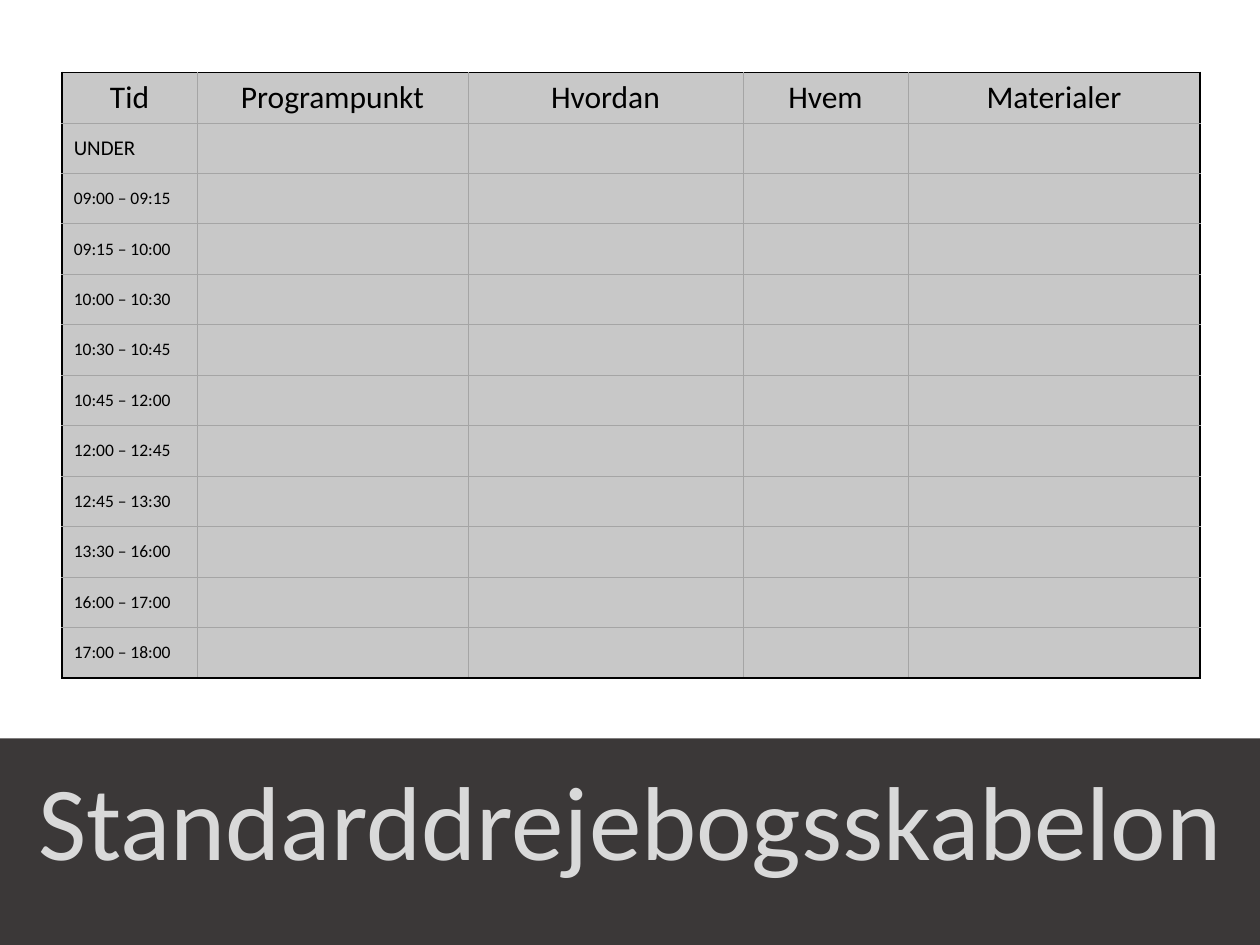
from lxml.etree import SubElement
from pptx import Presentation
from pptx.dml.color import RGBColor
from pptx.enum.shapes import MSO_SHAPE as Shape
from pptx.enum.text import MSO_ANCHOR as Anchor, PP_ALIGN as Align
from pptx.oxml.ns import qn
from pptx.util import Pt

BLACK = RGBColor(0x00, 0x00, 0x00)
GRID_GREY = RGBColor(0xA5, 0xA5, 0xA5)
CELL_GREY = RGBColor(0xC8, 0xC8, 0xC8)
BAND_GREY = RGBColor(0x3B, 0x38, 0x38)
TITLE_GREY = RGBColor(0xD9, 0xD9, 0xD9)


def write(frame, text, size, color=BLACK, align=Align.LEFT):
    paragraph = frame.paragraphs[0]
    paragraph.alignment = align
    run = paragraph.add_run()
    run.text = text
    run.font.name = "Calibri"
    run.font.size = Pt(size)
    run.font.color.rgb = color


def add_border(cell, side, color, width):
    line = SubElement(cell._tc.get_or_add_tcPr(), qn(f"a:ln{side}"), w=str(Pt(width)))
    fill = SubElement(line, qn("a:solidFill"))
    SubElement(fill, qn("a:srgbClr"), val=str(color))


prs = Presentation()
prs.slide_width, prs.slide_height = Pt(720), Pt(540)
slide = prs.slides.add_slide(prs.slide_layouts[6])

# Schedule: headings across the top, times down the first column
headings = ["Tid", "Programpunkt", "Hvordan", "Hvem", "Materialer"]
times = ["UNDER", "09:00 – 09:15", "09:15 – 10:00", "10:00 – 10:30",
         "10:30 – 10:45", "10:45 – 12:00", "12:00 – 12:45", "12:45 – 13:30",
         "13:30 – 16:00", "16:00 – 17:00", "17:00 – 18:00"]
widths = [77.1, 154.9, 157.1, 94.3, 166.9]
row_height = 28.83
last_row, last_col = len(times), len(headings) - 1

schedule = slide.shapes.add_table(
    last_row + 1, last_col + 1, Pt(35.5), Pt(41.4),
    Pt(sum(widths)), Pt(row_height * (last_row + 1))).table
for column, width in zip(schedule.columns, widths):
    column.width = Pt(width)

for r, row in enumerate(schedule.rows):
    row.height = Pt(row_height)
    for c, cell in enumerate(row.cells):
        cell.vertical_anchor = Anchor.MIDDLE
        cell.margin_left = cell.margin_right = Pt(6.7)
        cell.margin_top = cell.margin_bottom = Pt(3.4)

        # Black outer frame, thin grey inner grid
        outer = {"L": c == 0, "R": c == last_col, "T": r == 0, "B": r == last_row}
        for side, is_outer in outer.items():
            add_border(cell, side, *((BLACK, 1) if is_outer else (GRID_GREY, 0.5)))
        cell.fill.solid()
        cell.fill.fore_color.rgb = CELL_GREY

        if r == 0:
            write(cell.text_frame, headings[c], 18, align=Align.CENTER)
        elif c == 0:
            write(cell.text_frame, times[r - 1], 12 if r == 1 else 10)

# Dark band at the foot
band = slide.shapes.add_shape(Shape.RECTANGLE, Pt(-7.2), Pt(422), Pt(728.6), Pt(119.5))
band.shadow.inherit = False
band.fill.solid()
band.fill.fore_color.rgb = BAND_GREY
band.line.fill.background()

# Title on the band
title = slide.shapes.add_textbox(Pt(0), Pt(428.4), Pt(720), Pt(80)).text_frame
title.word_wrap = True
write(title, "Standarddrejebogsskabelon", 60, TITLE_GREY, Align.CENTER)

prs.save("out.pptx")
